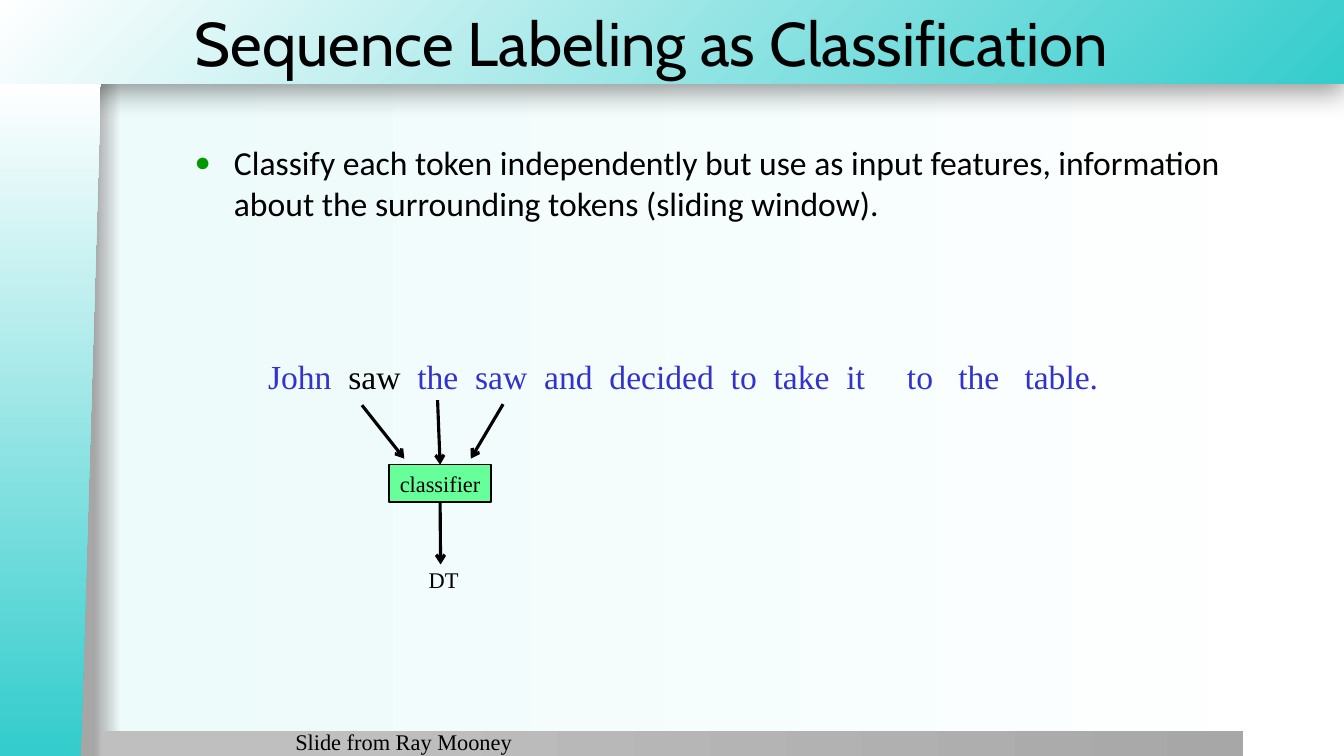
import pptx
import pptx.dml.color
import pptx.enum.shapes
import pptx.enum.text
import pptx.oxml
import pptx.oxml.ns
import pptx.util
import lxml.etree

Inches = pptx.util.Inches
Pt = pptx.util.Pt
qn = pptx.oxml.ns.qn
Shape = pptx.enum.shapes.MSO_SHAPE
Align = pptx.enum.text.PP_ALIGN
Anchor = pptx.enum.text.MSO_ANCHOR
AutoSize = pptx.enum.text.MSO_AUTO_SIZE


def paint(color_format, value):
    color_format.rgb = pptx.dml.color.RGBColor.from_string(value)


def add_xml(parent, tag, **attributes):
    return lxml.etree.SubElement(
        parent, qn(tag), {name: str(value) for name, value in attributes.items()})


def write(frame, spans, size=16, font="Times New Roman", align=Align.LEFT,
          anchor=Anchor.TOP, wrap=True, grow=False):
    frame.word_wrap = wrap
    frame.auto_size = AutoSize.SHAPE_TO_FIT_TEXT if grow else AutoSize.NONE
    frame.vertical_anchor = anchor
    para = frame.paragraphs[0]
    para.alignment = align
    for text, color in spans:
        span = para.add_run()
        span.text = text
        span.font.size = Pt(size)
        span.font.name = font
        paint(span.font.color, color)
    return para


class SlideBuilder:
    ink = "000000"
    blue = "3333CC"
    teal = "34CCCC"
    white = "FFFFFF"
    green = "66FF99"
    bullet = "009900"

    def __init__(self, deck):
        self.page = deck.slides.add_slide(deck.slide_layouts[1])

    def gradient(self, fill, holder, stops, circle=False):
        fill.gradient()
        grad = next(holder.iter(qn("a:gradFill")))
        for child in list(grad):
            grad.remove(child)
        grad.set("rotWithShape", "1")
        stop_list = add_xml(grad, "a:gsLst")
        for percent, color in stops:
            stop = add_xml(stop_list, "a:gs", pos=percent * 1000)
            add_xml(stop, "a:srgbClr", val=color)
        if circle:
            focus = add_xml(grad, "a:path", path="circle")
            add_xml(focus, "a:fillToRect", l=100000, t=100000)
        else:
            add_xml(grad, "a:lin", ang=0, scaled=0)

    def background(self, stops):
        self.gradient(self.page.background.fill, self.page.element, stops)

    def band(self, kind, place, stops, circle=False):
        band = self.page.shapes.add_shape(kind, *map(Inches, place))
        band.shadow.inherit = False
        band.line.fill.background()
        self.gradient(band.fill, band.element, stops, circle)
        return band

    def drop_shadow(self, shape):
        effects = next(shape.element.iter(qn("a:effectLst")))
        shadow = add_xml(effects, "a:outerShdw", blurRad=Pt(20), dist=Pt(6),
                         dir=90 * 60000, algn="t", rotWithShape=0)
        add_xml(add_xml(shadow, "a:srgbClr", val=self.ink), "a:alpha", val=40000)

    def placeholder(self, index, place, text, **style):
        box = self.page.placeholders[index]
        box.left, box.top, box.width, box.height = map(Inches, place)
        box.element.getparent().append(box.element)
        return write(box.text_frame, [(text, self.ink)], **style)

    def bulleted(self, para):
        para.space_before = Pt(4.8)
        props = para._p.get_or_add_pPr()
        props.set("marL", str(Inches(0.39)))
        props.set("indent", str(-Inches(0.39)))
        add_xml(add_xml(props, "a:buClr"), "a:srgbClr", val=self.bullet)
        add_xml(props, "a:buSzPct", val=80000)
        add_xml(props, "a:buFont", typeface="Arial")
        add_xml(props, "a:buChar", char="●")

    def label(self, place, spans, **style):
        box = self.page.shapes.add_textbox(*map(Inches, place))
        write(box.text_frame, spans, **style)

    def node(self, place, text):
        box = self.page.shapes.add_shape(Shape.RECTANGLE, *map(Inches, place))
        box.shadow.inherit = False
        box.fill.solid()
        paint(box.fill.fore_color, self.green)
        paint(box.line.color, self.ink)
        box.line.width = Pt(1)
        write(box.text_frame, [(text, self.ink)], align=Align.CENTER,
              anchor=Anchor.MIDDLE, wrap=False, grow=True)
        return box

    def arrow(self, start, end):
        line = self.page.shapes.add_connector(
            pptx.enum.shapes.MSO_CONNECTOR.STRAIGHT, *map(Inches, start + end))
        paint(line.line.color, self.ink)
        line.line.width = Pt(2.25)
        add_xml(line.line._get_or_add_ln(), "a:tailEnd", type="arrow")
        add_xml(line.element.spPr, "a:effectLst")
        return line


def main():
    deck = pptx.Presentation()
    deck.slide_width = Inches(13.33)
    deck.slide_height = Inches(7.5)
    slide = SlideBuilder(deck)

    slide.background([(7, "A6A6A6"), (9, "EDFBFB"), (100, slide.white)])
    header = slide.band(Shape.RECTANGLE, (-0.01, 0, 13.34, 0.83),
                        [(0, slide.teal), (100, slide.white)], circle=True)
    slide.drop_shadow(header)
    slide.band(Shape.RECTANGLE, (1, 7.25, 11.33, 0.26),
               [(20, "BFBFBF"), (100, "A7A7A7")])
    side = slide.band(Shape.FLOWCHART_MANUAL_INPUT, (-2.84, 3.67, 6.68, 1),
                      [(1, slide.teal), (100, slide.white)])
    side.rotation = 270
    side.element.spPr.find(qn("a:xfrm")).set("flipV", "1")

    slide.placeholder(0, (1.83, 0, 11.51, 0.83), "Sequence Labeling as Classification",
                      size=44, font="Cabin", anchor=Anchor.MIDDLE)
    point = slide.placeholder(
        1, (1.83, 1.36, 10.5, 5.79),
        "Classify each token independently but use as input features, "
        "information about the surrounding tokens (sliding window).",
        size=24, font="Calibri")
    slide.bulleted(point)

    slide.label((2.56, 3.48, 8.51, 0.51),
                [("John  ", slide.blue), ("saw ", slide.ink),
                 (" the  saw  and  decided  to  take  it     to   the   table.", slide.blue)],
                size=24, wrap=False, grow=True)
    classifier = slide.node((3.86, 4.61, 1.01, 0.37), "classifier")
    slide.arrow((3.59, 4.02), (4.01, 4.55))
    slide.arrow((4.99, 4.01), (4.67, 4.55))
    slide.arrow((4.34, 3.97), (4.36, 4.56)).end_connect(classifier, 0)
    slide.arrow((4.35, 5.02), (4.37, 5.6)).begin_connect(classifier, 2)
    slide.label((4.15, 5.57, 0.5, 0.37), [("DT", slide.ink)],
                align=Align.CENTER, wrap=False, grow=True)
    slide.label((2.83, 7.17, 3.42, 0.25), [("Slide from Ray Mooney", slide.ink)])

    deck.save("out.pptx")


if __name__ == "__main__":
    main()
